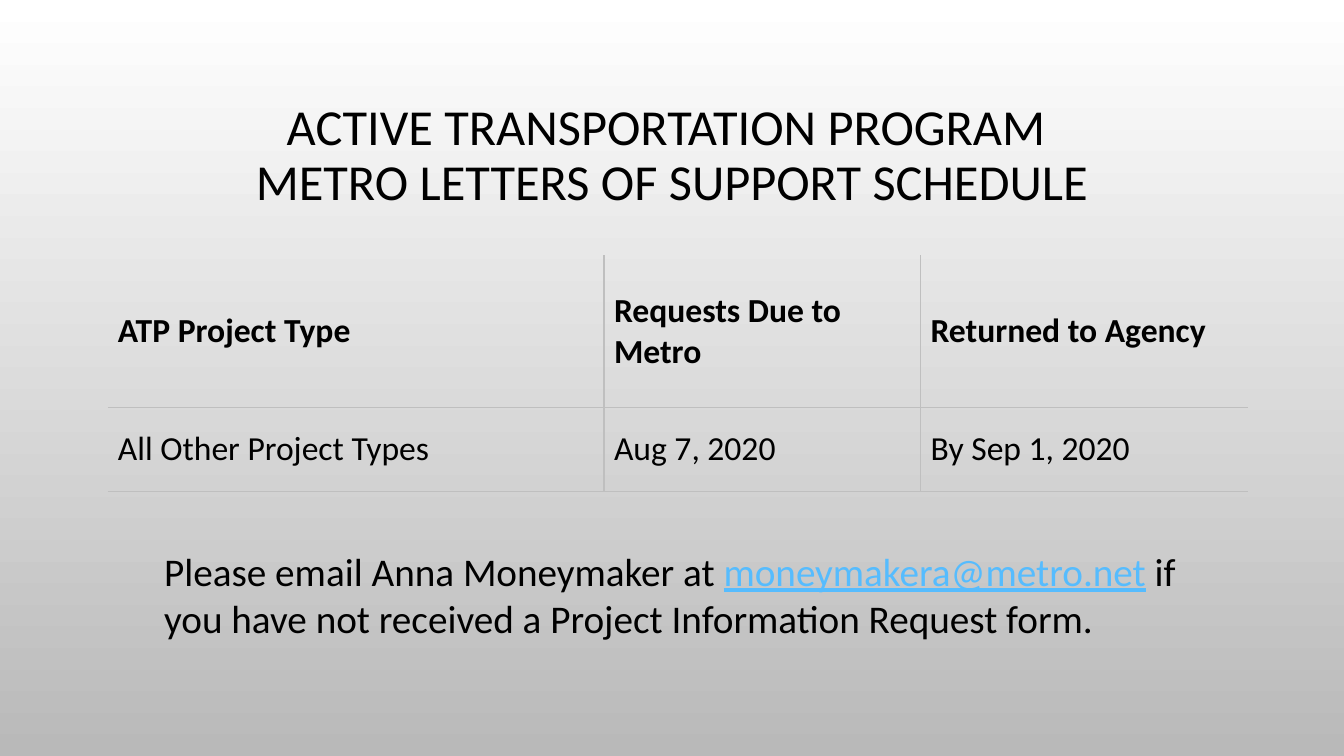
from lxml import etree
from pptx import Presentation
from pptx.dml.color import RGBColor
from pptx.enum.text import MSO_ANCHOR, PP_ALIGN
from pptx.oxml.ns import qn
from pptx.util import Inches, Pt

BLACK = RGBColor(0x00, 0x00, 0x00)
WHITE = RGBColor(0xFF, 0xFF, 0xFF)
GREY = RGBColor(0xB9, 0xB9, 0xB9)
RULE = RGBColor(0xBF, 0xBF, 0xBF)
BLUE = RGBColor(0x56, 0xBC, 0xFE)

COLS = [4.92, 3.14, 3.25]
ROWS = [1.51, 0.84]
DATES = [
    ["ATP Project Type", "Requests Due to Metro", "Returned to Agency"],
    ["All Other Project Types", "Aug 7, 2020", "By Sep 1, 2020"],
]


def add_text(para, text, size=24, color=BLACK, bold=False, line=False):
    """Add text to a paragraph, with a line break at each newline."""
    for i, part in enumerate(text.split("\n")):
        if i:
            para.add_line_break()
        run = para.add_run()
        run.text = part
        font = run.font
        font.name = "Calibri"
        font.size = Pt(size)
        font.bold = bold
        font.underline = line
        font.color.rgb = color


def place(shape, left, top, width, height):
    shape.left, shape.top = Inches(left), Inches(top)
    shape.width, shape.height = Inches(width), Inches(height)


def set_edges(cell, shown):
    """Rule the shown sides of a cell and clear the others."""
    props = cell._tc.get_or_add_tcPr()
    for i, side in enumerate("LRTB"):
        edge = etree.Element(qn("a:ln" + side), w=str(Pt(1)))
        if side in shown:
            fill = etree.SubElement(edge, qn("a:solidFill"))
            etree.SubElement(fill, qn("a:srgbClr"), val=str(RULE))
        else:
            etree.SubElement(edge, qn("a:noFill"))
        props.insert(i, edge)


def add_back(slide):
    fill = slide.background.fill
    fill.gradient()
    fill.gradient_angle = 270
    for stop, color in zip(fill.gradient_stops, (WHITE, GREY)):
        stop.color.rgb = color


def add_title(slide, text):
    title = slide.shapes.title
    place(title, 1, 0.68, 11.33, 1.75)
    frame = title.text_frame
    frame.word_wrap = True
    frame.vertical_anchor = MSO_ANCHOR.MIDDLE
    para = frame.paragraphs[0]
    para.alignment = PP_ALIGN.CENTER
    para.line_spacing = 0.9
    add_text(para, text, size=36)


def add_dates(slide):
    frame = slide.shapes.add_table(
        len(ROWS), len(COLS), Inches(1.07), Inches(2.53),
        Inches(sum(COLS)), Inches(sum(ROWS)))
    table = frame.table
    table.horz_banding = False
    table.first_row = False
    for col, width in zip(table.columns, COLS):
        col.width = Inches(width)
    for row, height in zip(table.rows, ROWS):
        row.height = Inches(height)
    for r, texts in enumerate(DATES):
        for c, text in enumerate(texts):
            cell = table.cell(r, c)
            cell.fill.background()
            cell.vertical_anchor = MSO_ANCHOR.MIDDLE
            add_text(cell.text_frame.paragraphs[0], text, bold=r == 0)
            # Rules below each row and between columns
            shown = "B"
            if r > 0:
                shown += "T"
            if c > 0:
                shown += "L"
            if c < len(COLS) - 1:
                shown += "R"
            set_edges(cell, shown)


def add_note(slide):
    box = slide.shapes.add_textbox(
        Inches(1.53), Inches(5.38), Inches(10.44), Inches(1.04))
    box.text_frame.word_wrap = True
    para = box.text_frame.paragraphs[0]
    add_text(para, "Please email Anna Moneymaker at ", size=28)
    add_text(para, "moneymakera@metro.net", size=28, color=BLUE, line=True)
    add_text(para, " if you have not received a Project Information "
             "Request form.", size=28)


def main():
    deck = Presentation()
    deck.slide_width, deck.slide_height = Inches(13.33), Inches(7.5)
    slide = deck.slides.add_slide(deck.slide_layouts[5])

    # Background and heading
    add_back(slide)
    add_title(slide, "ACTIVE TRANSPORTATION PROGRAM \n"
              "METRO LETTERS OF SUPPORT SCHEDULE")

    # Schedule and contact
    add_dates(slide)
    add_note(slide)
    deck.save("out.pptx")


if __name__ == "__main__":
    main()
